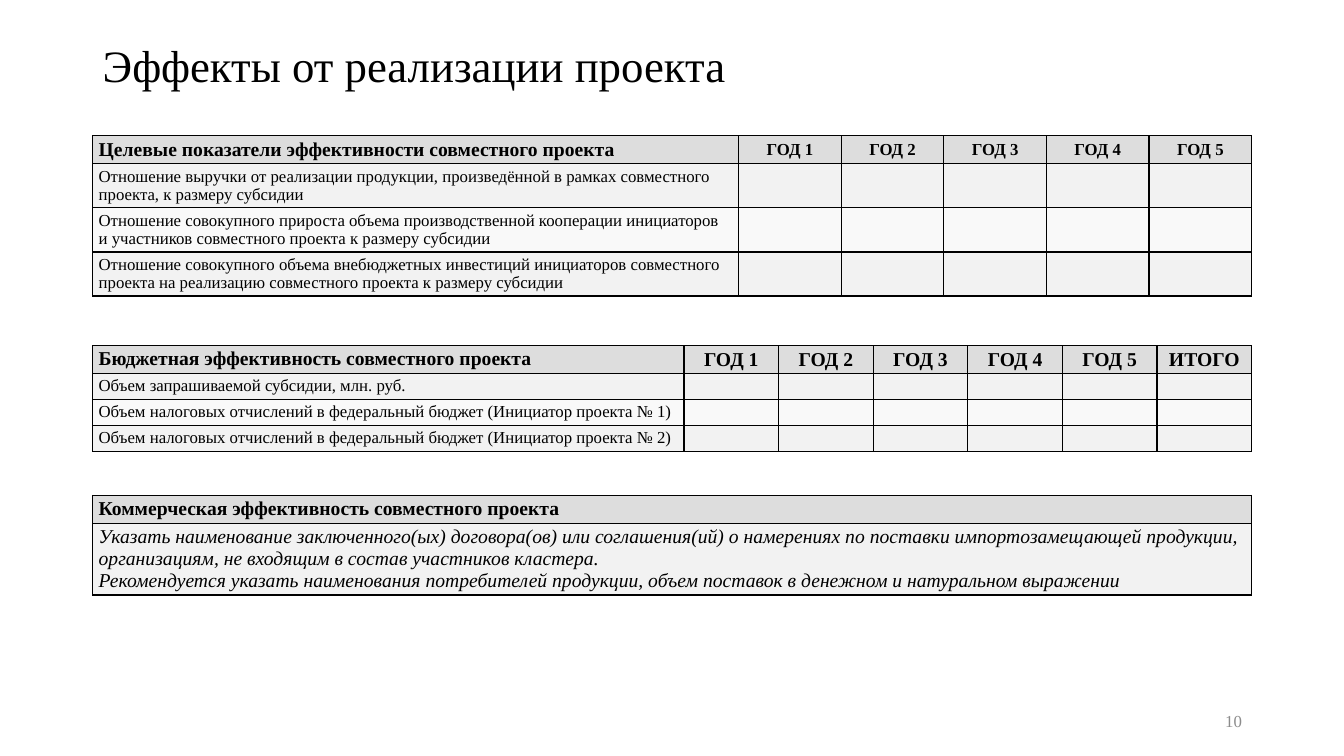
"""Build the slide on the effects of the joint project."""
from lxml import etree
from pptx import Presentation
from pptx.dml.color import RGBColor
from pptx.enum import text
from pptx.oxml import ns
from pptx.util import Pt

TITLE = "Эффекты от реализации проекта"
PAGE = "10"
YEARS = [f"ГОД {n}" for n in range(1, 6)]
TABLES = [
    dict(
        top=97, head="Целевые показатели эффективности совместного проекта",
        periods=YEARS, period_w=73.3, period_size=12, size=12, italic=False,
        heights=[20, 31.5, 31.5, 31.5], anchor=text.MSO_ANCHOR.MIDDLE,
        rows=[
            "Отношение выручки от реализации продукции, произведённой в рамках совместного проекта, к размеру субсидии",
            "Отношение совокупного прироста объема производственной кооперации инициаторов и участников совместного проекта к размеру субсидии",
            "Отношение совокупного объема внебюджетных инвестиций инициаторов совместного проекта на реализацию совместного проекта к размеру субсидии",
        ],
    ),
    dict(
        top=247, head="Бюджетная эффективность совместного проекта",
        periods=YEARS + ["ИТОГО"], period_w=67.6, period_size=14, size=12, italic=False,
        heights=[20, 18, 18, 18], anchor=text.MSO_ANCHOR.TOP,
        rows=[
            "Объем запрашиваемой субсидии, млн. руб.",
            "Объем налоговых отчислений в федеральный бюджет (Инициатор проекта № 1)",
            "Объем налоговых отчислений в федеральный бюджет (Инициатор проекта № 2)",
        ],
    ),
    dict(
        top=354, head="Коммерческая эффективность совместного проекта",
        periods=[], period_w=0, period_size=14, size=14, italic=True,
        heights=[20, 51], anchor=text.MSO_ANCHOR.TOP,
        rows=[
            "Указать наименование заключенного(ых) договора(ов) или соглашения(ий) о намерениях по поставки импортозамещающей продукции, организациям, не входящим в состав участников кластера.\n"
            "Рекомендуется указать наименования потребителей продукции, объем поставок в денежном и натуральном выражении",
        ],
    ),
]

FONT = "Times New Roman"
BLACK = RGBColor(0x00, 0x00, 0x00)
GREY = RGBColor(0x8C, 0x8C, 0x8C)
HEAD_FILL = RGBColor(0xDD, 0xDD, 0xDD)
ROW_FILLS = [RGBColor(0xF2, 0xF2, 0xF2), RGBColor(0xF9, 0xF9, 0xF9)]
LEFT, WIDTH = 66.2, 828


def write(tf, words, size=12, color=BLACK, bold=False, italic=False,
          align=text.PP_ALIGN.LEFT, spacing=None):
    for i, line in enumerate(words.split("\n")):
        p = tf.add_paragraph() if i else tf.paragraphs[0]
        p.alignment = align
        if spacing:
            p.line_spacing = spacing
        if not line:
            etree.SubElement(p._p, ns.qn("a:endParaRPr"), sz=str(size * 100))
            continue
        r = p.add_run()
        r.text = line
        f = r.font
        f.name, f.size, f.bold, f.italic = FONT, Pt(size), bold, italic
        f.color.rgb = color


def outline(cell):
    tcPr = cell._tc.get_or_add_tcPr()
    for i, side in enumerate(("lnL", "lnR", "lnT", "lnB")):
        ln = etree.Element(ns.qn(f"a:{side}"), w=str(Pt(1)))
        fill = etree.SubElement(ln, ns.qn("a:solidFill"))
        etree.SubElement(fill, ns.qn("a:srgbClr"), val=str(BLACK))
        tcPr.insert(i, ln)


def add_effects_table(s, data):
    periods, heights = data["periods"], data["heights"]
    count = len(periods)
    widths = [WIDTH - count * data["period_w"]] + [data["period_w"]] * count
    frame = s.shapes.add_table(len(heights), len(widths), Pt(LEFT), Pt(data["top"]),
                               Pt(WIDTH), Pt(sum(heights)))
    table = frame.table
    table.first_row = table.horz_banding = False
    for column, w in zip(table.columns, widths):
        column.width = Pt(w)
    for row, h in zip(table.rows, heights):
        row.height = Pt(h)
    grid = [[data["head"]] + periods] + [[label] + [""] * count for label in data["rows"]]
    for i, line in enumerate(grid):
        for j, words in enumerate(line):
            cell = table.cell(i, j)
            cell.margin_left = cell.margin_right = Pt(4.3)
            cell.margin_top = cell.margin_bottom = Pt(1.9)
            cell.fill.solid()
            cell.fill.fore_color.rgb = ROW_FILLS[(i - 1) % 2] if i else HEAD_FILL
            cell.vertical_anchor = text.MSO_ANCHOR.MIDDLE if j else data["anchor"]
            if i:
                size = data["size"]
            else:
                size = data["period_size"] if j else 14
            write(cell.text_frame, words, size=size, bold=i == 0,
                  italic=data["italic"] and i > 0,
                  align=text.PP_ALIGN.CENTER if j else text.PP_ALIGN.LEFT)
            outline(cell)


def main():
    prs = Presentation()
    prs.slide_width, prs.slide_height = Pt(960), Pt(540)
    s = prs.slides.add_slide(prs.slide_layouts[5])
    title = s.shapes.title
    title.left, title.top, title.width, title.height = Pt(LEFT), Pt(28.8), Pt(WIDTH), Pt(39.6)
    title.text_frame.vertical_anchor = text.MSO_ANCHOR.MIDDLE
    write(title.text_frame, TITLE, size=32, spacing=0.9)
    for data in TABLES:
        add_effects_table(s, data)
    sp = s.shapes.add_textbox(Pt(678.2), Pt(500.5), Pt(216), Pt(28.8))
    tf = sp.text_frame
    tf.word_wrap = True
    tf.vertical_anchor = text.MSO_ANCHOR.MIDDLE
    write(tf, PAGE, color=GREY, align=text.PP_ALIGN.RIGHT)
    prs.save("out.pptx")


if __name__ == "__main__":
    main()
